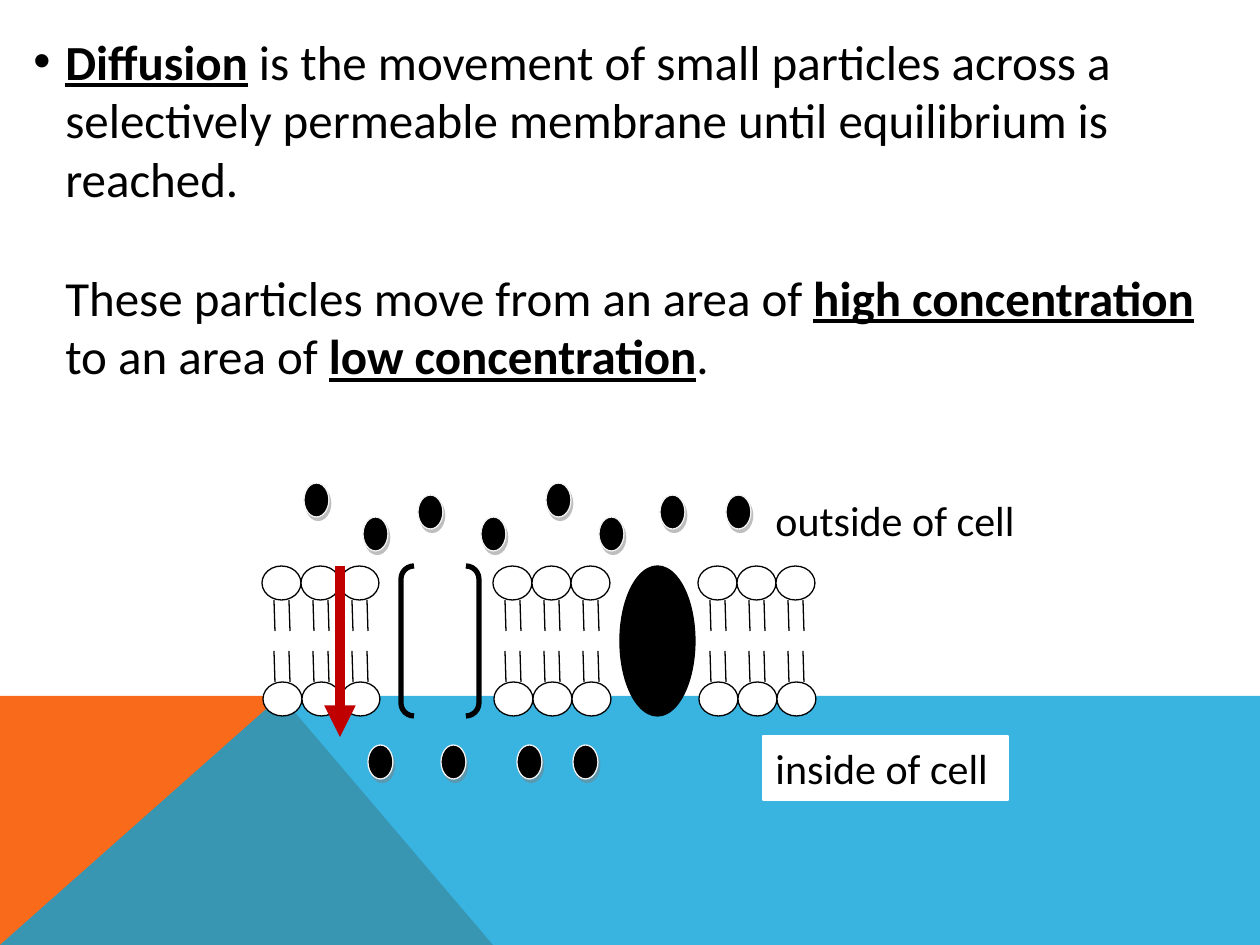
from lxml.etree import SubElement
from pptx import Presentation
from pptx.dml.color import RGBColor
from pptx.enum.shapes import MSO_CONNECTOR, MSO_SHAPE
from pptx.enum.text import MSO_ANCHOR, PP_ALIGN
from pptx.oxml.ns import qn
from pptx.util import Pt

EMU_PER_PX = 914400 / 126
WIDTH, HEIGHT = 1260, 945
FONT = "Calibri"
BLACK, WHITE = "000000", "FFFFFF"


def px(n):
    return round(n * EMU_PER_PX)


def color(value):
    return RGBColor.from_string(value)


def sub(parent, tag, **attrs):
    """Append a DrawingML child element."""
    return SubElement(parent, qn(tag), {k: str(v) for k, v in attrs.items()})


def add_runs(p, runs, size):
    """Add (text, emphasised) runs; emphasis is bold and underlined."""
    for text, strong in runs:
        r = p.add_run()
        r.text = text
        r.font.name, r.font.size = FONT, Pt(size)
        r.font.color.rgb = color(BLACK)
        r.font.bold = r.font.underline = strong


def add_shape(s, kind, x, y, w, h, fill, line=BLACK, weight=0.75):
    sp = s.shapes.add_shape(kind, px(x), px(y), px(w), px(h))
    sp.shadow.inherit = False
    if fill:
        sp.fill.solid()
        sp.fill.fore_color.rgb = color(fill)
    else:
        sp.fill.background()
    sp.line.color.rgb = color(line)
    sp.line.width = Pt(weight)
    return sp


def add_line(s, x1, y1, x2, y2, line=BLACK, weight=0.75):
    cn = s.shapes.add_connector(MSO_CONNECTOR.STRAIGHT, px(x1), px(y1), px(x2), px(y2))
    cn.line.color.rgb = color(line)
    cn.line.width = Pt(weight)
    sub(cn._element.spPr, "a:effectLst")
    return cn


def add_polygon(s, points, fill, alpha=100):
    fb = s.shapes.build_freeform(*points[0], scale=EMU_PER_PX)
    fb.add_line_segments(points[1:], close=True)
    sp = fb.convert_to_shape()
    sp.shadow.inherit = False
    sp.fill.solid()
    sp.fill.fore_color.rgb = color(fill)
    sp.line.fill.background()
    clr = sp._element.spPr.find(qn("a:solidFill"))[0]
    sub(clr, "a:alpha", val=alpha * 1000)


def add_backdrop(s, y, peak):
    """Two overlapping bands from y to the slide's foot, meeting at peak."""
    add_polygon(s, [(0, HEIGHT), (0, y), (peak, y), (493, HEIGHT)], "F96A1B")
    add_polygon(s, [(0, HEIGHT), (peak, y), (WIDTH, y), (WIDTH, HEIGHT)], "08A1D9", 80)


def add_definition(s, x, y, w, h):
    tf = s.shapes.add_textbox(px(x), px(y), px(w), px(h)).text_frame
    tf.word_wrap = True
    tf.vertical_anchor = MSO_ANCHOR.TOP
    indent = px(32)

    p = tf.paragraphs[0]
    add_runs(p, [
        ("Diffusion", True),
        (" is the movement of small particles across a selectively permeable "
         "membrane until equilibrium is reached.", False),
    ], 28)
    pPr = p._p.get_or_add_pPr()
    pPr.set("marL", str(indent))
    pPr.set("indent", str(-indent))
    sub(pPr, "a:buFont", typeface="Arial")
    sub(pPr, "a:buChar", char="•")

    p = tf.add_paragraph()
    p.space_before = Pt(34)
    add_runs(p, [
        ("These particles move from an area of ", False),
        ("high concentration", True),
        (" to an area of ", False),
        ("low concentration", True),
        (".", False),
    ], 28)
    p._p.get_or_add_pPr().set("marL", str(indent))


def add_bilayer(s, x, y, w, h):
    """Three facing pairs of lipids, each a head with two tails."""
    head_w, head_h, tail = w / 3, 34, 31
    for i in range(3):
        left = x + i * head_w
        for head_x, head_y, start, end, lean in (
            (left, y, y + head_h, y + head_h + tail, 1),
            (left + 1, y + h - head_h, y + h - head_h, y + h - head_h - tail, -1),
        ):
            add_shape(s, MSO_SHAPE.OVAL, head_x, head_y, head_w, head_h, WHITE)
            for offset in (12, 27):
                tail_x = head_x + offset
                add_line(s, tail_x, start, tail_x + lean, end)


def add_membrane(s, x, y, h):
    for offset in (0, 231, 436):
        add_bilayer(s, x + offset, y, 117, h)
    channel = add_shape(s, MSO_SHAPE.DOUBLE_BRACKET, x + 139, y, 78, h, None, weight=3)
    channel.adjustments[0] = 0.167
    add_shape(s, MSO_SHAPE.OVAL, x + 358, y, 75, h, BLACK)
    arrow = add_line(s, x + 78, y, x + 78, y + 171, "C00000", 6)
    sub(arrow.line._get_or_add_ln(), "a:tailEnd", type="triangle")


def add_particles(s, x, y, offsets):
    for dx, dy in offsets:
        sp = add_shape(s, MSO_SHAPE.OVAL, x + dx, y + dy, 25, 34, BLACK, "F2F2F2", 0)
        effects = sp._element.spPr.find(qn("a:effectLst"))
        shadow = sub(effects, "a:outerShdw", blurRad=0, dist=Pt(2.2),
                     dir=63 * 60000, algn="ctr", rotWithShape=0)
        sub(sub(shadow, "a:srgbClr", val="7F7F7F"), "a:alpha", val=50000)


def add_label(s, x, y, w, h, text):
    tf = add_shape(s, MSO_SHAPE.RECTANGLE, x, y, w, h, WHITE, WHITE).text_frame
    tf.word_wrap = True
    tf.vertical_anchor = MSO_ANCHOR.TOP
    p = tf.paragraphs[0]
    p.alignment = PP_ALIGN.LEFT
    add_runs(p, [(text, False)], 24)


def main():
    prs = Presentation()
    prs.slide_width, prs.slide_height = px(WIDTH), px(HEIGHT)
    s = prs.slides.add_slide(prs.slide_layouts[6])
    add_backdrop(s, 696, 281)
    add_definition(s, 21, 25, 1207, 403)
    add_membrane(s, 262, 566, 150)
    add_particles(s, 304, 483, [(0, 0), (59, 34), (114, 12), (177, 34),
                                (242, 0), (295, 34), (356, 12), (422, 12)])
    add_particles(s, 368, 745, [(0, 0), (73, 0), (149, 0), (205, 0)])
    add_label(s, 763, 488, 307, 64, "outside of cell")
    add_label(s, 763, 736, 245, 64, "inside of cell")
    prs.save("out.pptx")


if __name__ == "__main__":
    main()
